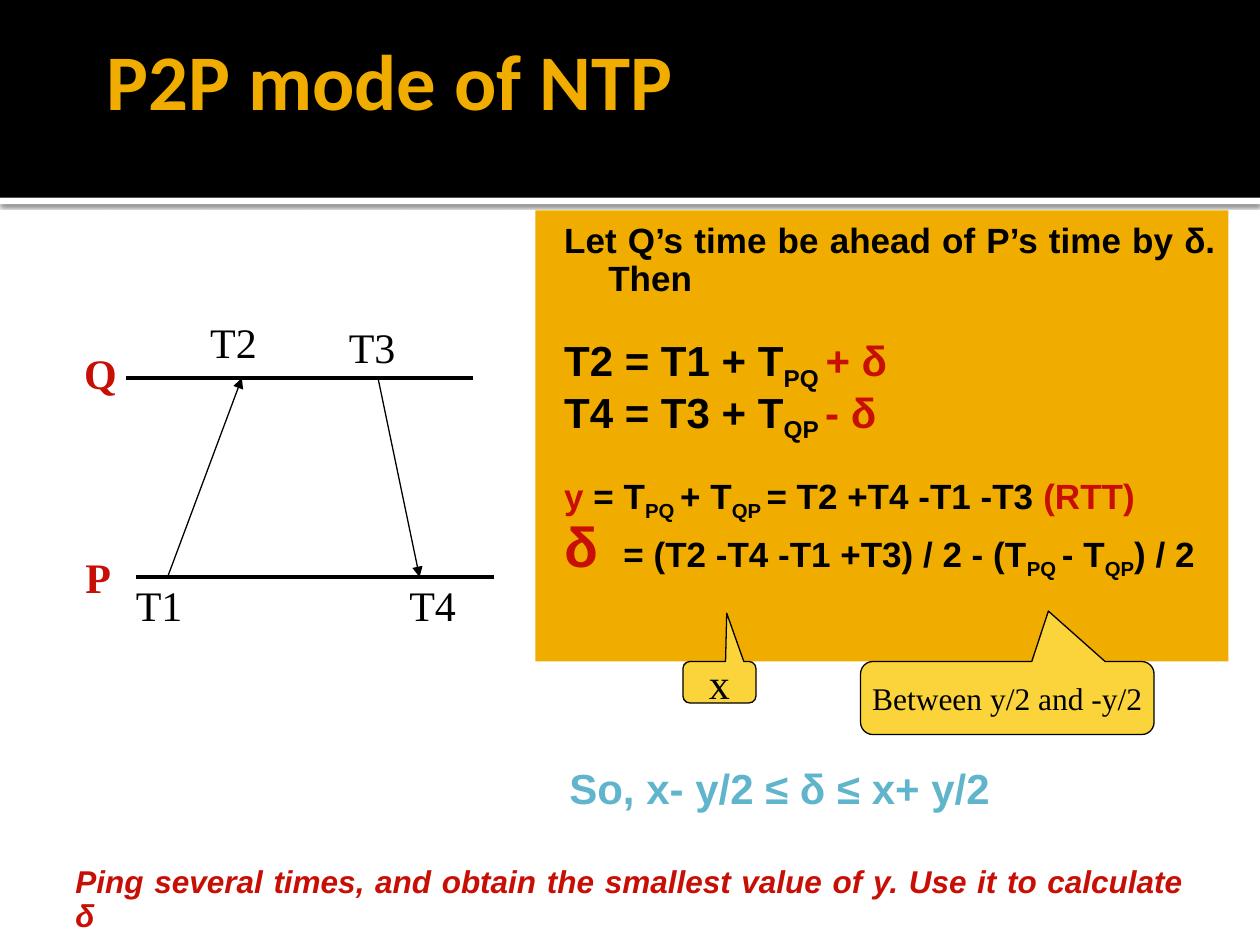
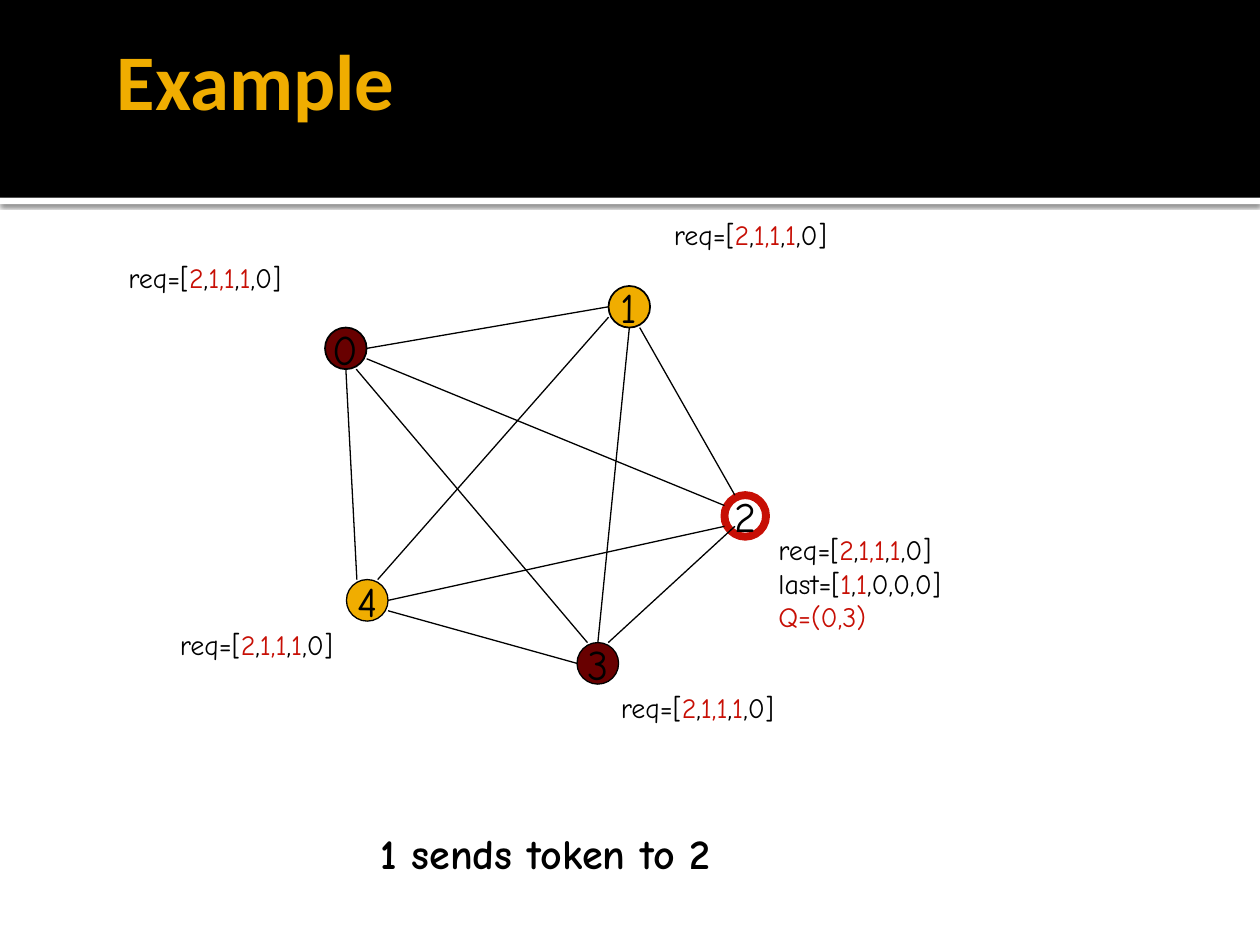
from lxml import etree
from pptx import Presentation
from pptx.dml.color import RGBColor
from pptx.enum import shapes, text
from pptx.oxml import ns
from pptx.util import Inches, Pt

BLACK, WHITE, GOLD = "000000", "FFFFFF", "F0AD00"
RED, MAROON, BLUE, YELLOW = "C70F05", "680000", "60B5CC", "FAD43A"
SERIF, SANS, HAND = "Times New Roman", "Arial", "Comic Neue"
SUB = {"baseline": -25000}
HOT = {"color": RED}
SHAPE, ALIGN, ANCHOR = shapes.MSO_SHAPE, text.PP_ALIGN, text.MSO_ANCHOR


def rgb(value):
    return RGBColor.from_string(value)


def sub(parent, tag, **attrs):
    return etree.SubElement(parent, ns.qn(tag), attrs)


def write(sp, paras, base, para_format=None, **frame):
    tf = sp.text_frame
    for name, value in frame.items():
        setattr(tf, name, value)
    for i, runs in enumerate(paras):
        p = tf.paragraphs[0] if i == 0 else tf.add_paragraph()
        for name, value in (para_format or {"alignment": ALIGN.LEFT}).items():
            setattr(p, name, value)
        for words, extra in runs:
            r = p.add_run()
            r.text = words
            style = {"color": BLACK, **base, **extra}
            r.font.color.rgb = rgb(style.pop("color"))
            baseline = style.pop("baseline", None)
            if baseline:
                r.font._element.set("baseline", str(baseline))
            for name, value in style.items():
                setattr(r.font, name, value)
    return tf


def font(name, size, **extra):
    return {"name": name, "size": Pt(size), **extra}


def add_text(s, x, y, w, h, paras, base, para_format=None, **frame):
    sp = s.shapes.add_textbox(Inches(x), Inches(y), Inches(w), Inches(h))
    return write(sp, paras, base, para_format, **frame)


def add_label(s, x, y, w, h, paras, base):
    add_text(s, x, y, w, h, paras, base, word_wrap=False,
             auto_size=text.MSO_AUTO_SIZE.SHAPE_TO_FIT_TEXT)


def add_box(s, kind, x, y, w, h, fill=None, line=None, width=0.75):
    sp = s.shapes.add_shape(kind, Inches(x), Inches(y), Inches(w), Inches(h))
    sp.shadow.inherit = False
    if fill:
        sp.fill.solid()
        sp.fill.fore_color.rgb = rgb(fill)
    else:
        sp.fill.background()
    if line:
        sp.line.color.rgb = rgb(line)
        sp.line.width = Pt(width)
    else:
        sp.line.fill.background()
    return sp


def add_line(s, start, end, width=0.75, arrow=False):
    c = s.shapes.add_connector(shapes.MSO_CONNECTOR.STRAIGHT,
                               *map(Inches, (*start, *end)))
    c.line.color.rgb = rgb(BLACK)
    c.line.width = Pt(width)
    if arrow:
        sub(c.line._get_or_add_ln(), "a:tailEnd", type="triangle")
    sub(c._element.spPr, "a:effectLst")


def add_slide(prs, title, title_x):
    s = prs.slides.add_slide(prs.slide_layouts[6])
    rule = add_box(s, SHAPE.RECTANGLE, 0, 1.57, 10, 0.05, WHITE)
    effects = rule._element.spPr.find(ns.qn("a:effectLst"))
    shadow = sub(effects, "a:outerShdw", blurRad=str(Pt(2.5)),
                 dist=str(Pt(0.8)), dir="5400000", algn="tl", rotWithShape="0")
    sub(sub(shadow, "a:srgbClr", val=BLACK), "a:alpha", val="60000")
    add_box(s, SHAPE.RECTANGLE, 0, 0, 10, 1.57, BLACK)
    add_text(s, title_x, 0, 8.5, 1.25, [[(title, {})]],
             font("Calibri", 45, bold=True, color=GOLD),
             word_wrap=True, vertical_anchor=ANCHOR.MIDDLE,
             margin_right=Inches(0.05))
    return s


def formula_panel(s, x, y, w, h):
    big, small = {"size": Pt(24)}, {"size": Pt(20)}
    paras = [
        [("Let Q’s time be ahead of P’s time by δ. Then", small)],
        [("T2 = T1 + T", big), ("PQ ", {**big, **SUB}), ("+ δ", {**big, **HOT})],
        [("T4 = T3 + T", big), ("QP ", {**big, **SUB}), ("- δ", {**big, **HOT})],
        [("y ", HOT), ("= T", {}), ("PQ ", SUB), ("+ T", {}), ("QP ", SUB),
         ("= T2 +T4 -T1 -T3 ", {}), ("(RTT)", HOT)],
        [("δ ", {"size": Pt(32), **HOT}), (" = (T2 -T4 -T1 +T3) / 2 - (T", {}),
         ("PQ ", SUB), ("- T", {}), ("QP", SUB), (") / 2", {})],
    ]
    panel = add_box(s, SHAPE.RECTANGLE, x, y, w, h, GOLD)
    tf = write(panel, paras, font(SANS, 20, bold=True),
               {"alignment": ALIGN.JUSTIFY, "line_spacing": 0.9},
               word_wrap=True, vertical_anchor=ANCHOR.TOP, margin_top=Inches(0.1))
    for p in tf.paragraphs:
        p._p.get_or_add_pPr().set("marL", str(Inches(0.48)))
        p._p.get_or_add_pPr().set("indent", str(Inches(-0.35)))
    for i in (1, 3):
        tf.paragraphs[i].space_before = Pt(21)


def timeline(s, x, y):
    q, p = y + 0.54, y + 2.12
    add_line(s, (x + 0.43, q), (x + 3.18, q), 2.25)
    add_line(s, (x + 0.51, p), (x + 3.35, p), 2.25)
    add_line(s, (x + 0.76, p), (x + 1.35, q), arrow=True)
    add_line(s, (x + 2.43, q), (x + 2.76, p), arrow=True)
    for name, dx, dy in (("T2", 1, 0), ("T1", 0.41, 2.09),
                         ("T4", 2.58, 2.09), ("T3", 2.1, 0.04)):
        add_label(s, x + dx, y + dy, 0.57, 0.5, [[(name, {})]], font(SERIF, 24))
    for name, dx, dy, w in (("Q", 0, 0.25, 0.46), ("P", 0.01, 1.87, 0.4)):
        add_label(s, x + dx, y + dy, w, 0.5, [[(name, {})]],
                  font(SERIF, 24, bold=True, color=RED))


def callout(s, x, y, w, h, words, size, tip):
    sp = add_box(s, SHAPE.ROUNDED_RECTANGULAR_CALLOUT, x, y, w, h, YELLOW, BLACK)
    for i, value in enumerate((*tip, 0.17)):
        sp.adjustments[i] = value
    write(sp, [[(words, {})]], font(SERIF, size), {"alignment": ALIGN.CENTER},
          word_wrap=False, vertical_anchor=ANCHOR.MIDDLE)


def ntp_slide(prs):
    s = add_slide(prs, "P2P mode of NTP", 0.75)
    formula_panel(s, 4.25, 1.67, 5.5, 3.58)
    add_text(s, 4.42, 6, 3.82, 0.5, [[("So, x- y/2 ≤ δ ≤ x+ y/2", {})]],
             font(SANS, 24, bold=True, color=BLUE), word_wrap=True)
    timeline(s, 0.57, 2.46)
    add_text(s, 0.5, 6.83, 8.99, 0.37,
             [[("Ping several times, and obtain the smallest value of y. "
                "Use it to calculate δ", {})]],
             font(SANS, 18, bold=True, italic=True, color=RED),
             {"alignment": ALIGN.JUSTIFY, "line_spacing": 0.9}, word_wrap=True)
    callout(s, 5.42, 5.25, 0.58, 0.33, "x", 24, (0.1, -1.66))
    callout(s, 6.83, 5.25, 2.33, 0.58, "Between y/2 and -y/2", 18, (0.14, -1.19))


def token_graph(s, x, y):
    d = 0.33
    nodes = [(1.66, 0.92, MAROON, BLACK, 1), (3.91, 0.59, GOLD, BLACK, 1),
             (4.83, 2.25, None, RED, 4.5), (3.66, 3.42, MAROON, BLACK, 0.75),
             (1.83, 2.92, GOLD, BLACK, 0.75)]
    for i, (dx, dy, fill, line, width) in enumerate(nodes):
        sp = add_box(s, SHAPE.OVAL, x + dx, y + dy, d, d, fill, line, width)
        write(sp, [[(str(i), {})]], font(HAND, 24), {"alignment": ALIGN.CENTER},
              word_wrap=False, vertical_anchor=ANCHOR.MIDDLE)

    def point(node, fx, fy):
        return x + nodes[node][0] + fx * d, y + nodes[node][1] + fy * d

    edges = [((0, 1, 0.5), (1, 0, 0.5)), ((1, 0.75, 1), (2, 0.25, 0)),
             ((2, 0.25, 0.75), (3, 0.75, 0)), ((3, 0, 0.5), (4, 1, 0.75)),
             ((4, 0.25, 0), (0, 0.5, 1)), ((0, 1, 0.75), (2, 0, 0.25)),
             ((0, 0.75, 1), (3, 0.25, 0)), ((1, 0.5, 1), (3, 0.5, 0)),
             ((1, 0, 0.75), (4, 0.75, 0)), ((2, 0, 0.75), (4, 1, 0.5))]
    for start, end in edges:
        add_line(s, point(*start), point(*end))

    req = [("req=[", {}), ("2", HOT), (",", {}), ("1,1", HOT), (",", {}),
           ("1", HOT), (",0]", {})]
    last = [("last=[", {}), ("1", HOT), (",", {}), ("1", HOT), (",0,0,0]", {})]
    queue = [("Q=(0,3)", HOT)]
    for dx, dy in ((0, 0.34), (4.33, 0), (3.91, 3.75), (0.41, 3.25)):
        add_label(s, x + dx, y + dy, 1.64, 0.41, [req], font(HAND, 16))
    add_label(s, x + 5.16, y + 2.5, 1.72, 1.34, [req, last, queue], font(HAND, 16))


def token_slide(prs):
    s = add_slide(prs, "Example", 0.83)
    token_graph(s, 0.92, 1.68)
    add_text(s, 2.92, 6.52, 4.17, 0.57, [[("1 sends token to 2", {})]],
             font(HAND, 24, bold=True), word_wrap=True)


def main():
    prs = Presentation()
    prs.slide_width, prs.slide_height = Inches(10), Inches(7.5)
    ntp_slide(prs)
    token_slide(prs)
    prs.save("out.pptx")


if __name__ == "__main__":
    main()
